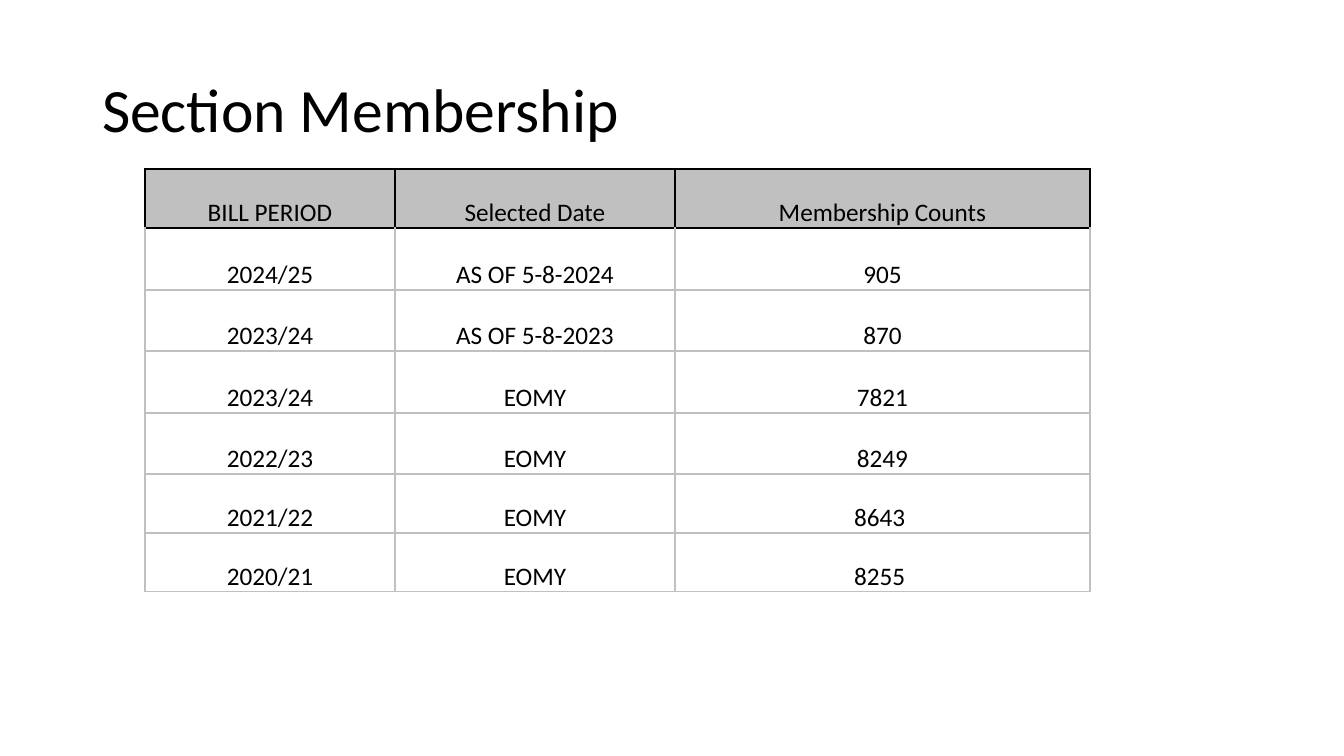
"""Build the Section Membership slide with its table of counts."""
from lxml import etree
from pptx import Presentation
from pptx.dml.color import RGBColor
from pptx.enum.text import MSO_ANCHOR, MSO_AUTO_SIZE, PP_ALIGN
from pptx.oxml.ns import qn
from pptx.util import Emu, Pt

MIDDLE, BOTTOM = MSO_ANCHOR.MIDDLE, MSO_ANCHOR.BOTTOM
LEFT, CENTER = PP_ALIGN.LEFT, PP_ALIGN.CENTER
NO_FIT = MSO_AUTO_SIZE.NONE
TITLE_ONLY = 5
FONT = "Calibri"
COLORS = {"text": "000000", "header": "C0C0C0", "grid": "C0C0C0", "header_line": "000000"}
COL_WIDTHS = [250, 280, 415]
ROW_HEIGHTS = [59, 62, 61, 62, 61, 59, 59]
ROWS = [
    ["BILL PERIOD", "Selected Date", "Membership Counts"],
    ["2024/25", "AS OF 5-8-2024", "905"],
    ["2023/24", "AS OF 5-8-2023", "870"],
    ["2023/24", "EOMY", "7821"],
    ["2022/23", "EOMY", "8249"],
    ["2021/22", "EOMY", "8643 "],
    ["2020/21", "EOMY", "8255 "],
]


def px(n):
    return Emu(round(n * 914400 / 100.8))


def add_text(tf, text, size, align):
    p = tf.paragraphs[0]
    p.alignment = align
    r = p.add_run()
    r.text = text
    r.font.name = FONT
    r.font.size = Pt(size)
    r.font.color.rgb = RGBColor.from_string(COLORS["text"])
    return p


prs = Presentation()
prs.slide_width, prs.slide_height = px(1344), px(756)
s = prs.slides.add_slide(prs.slide_layouts[TITLE_ONLY])

title = s.shapes.title
title.left, title.top, title.width, title.height = px(92), px(40), px(1159), px(146)
tf = title.text_frame
tf.word_wrap = True
tf.auto_size = NO_FIT
tf.vertical_anchor = MIDDLE
add_text(tf, "Section Membership", 44, LEFT).line_spacing = 0.9

table = s.shapes.add_table(
    len(ROWS), len(COL_WIDTHS), px(145), px(169), px(sum(COL_WIDTHS)), px(sum(ROW_HEIGHTS))
).table
table.first_row = False
table.horz_banding = False
for col, width in zip(table.columns, COL_WIDTHS):
    col.width = px(width)
for row, height in zip(table.rows, ROW_HEIGHTS):
    row.height = px(height)

for i, values in enumerate(ROWS):
    for j, value in enumerate(values):
        cell = table.cell(i, j)
        cell.vertical_anchor = BOTTOM
        cell.margin_left = cell.margin_right = px(7)
        cell.margin_top = cell.margin_bottom = 0
        add_text(cell.text_frame, value, 18, CENTER)
        if i == 0:
            cell.fill.solid()
            cell.fill.fore_color.rgb = RGBColor.from_string(COLORS["header"])
        else:
            cell.fill.background()
        tcPr = cell._tc.get_or_add_tcPr()
        for k, side in enumerate(["lnL", "lnR", "lnT", "lnB"]):
            dark = i == 0 or (i == 1 and side == "lnT")
            ln = etree.Element(qn(f"a:{side}"), w=str(Pt(1)))
            fill = etree.SubElement(ln, qn("a:solidFill"))
            color = COLORS["header_line" if dark else "grid"]
            etree.SubElement(fill, qn("a:srgbClr"), val=color)
            tcPr.insert(k, ln)

prs.save("out.pptx")
